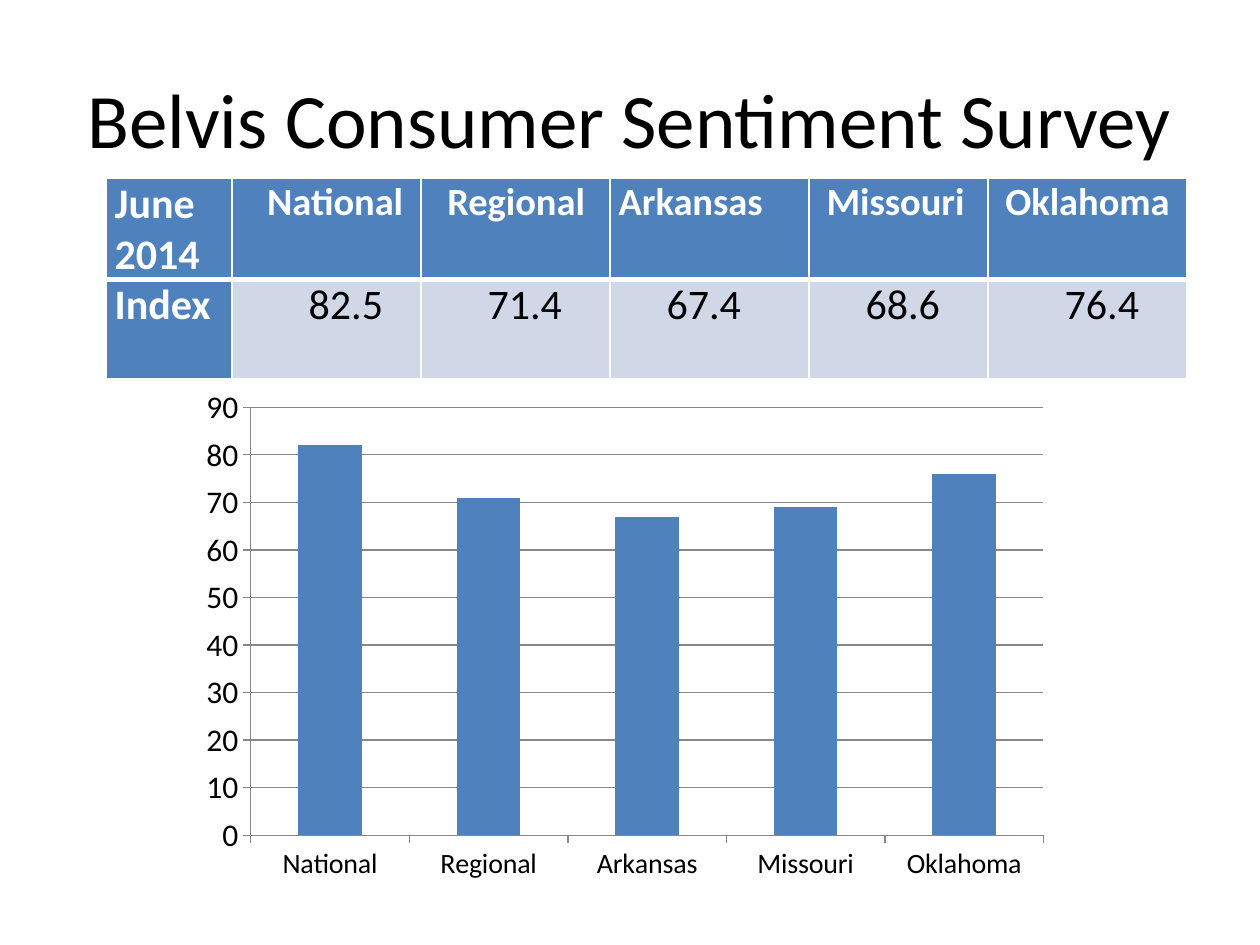
"""Build a slide with a consumer sentiment table and a matching column chart."""
from lxml.etree import SubElement
from pptx import Presentation
from pptx.chart.data import CategoryChartData
from pptx.dml.color import RGBColor
from pptx.enum.chart import XL_CHART_TYPE, XL_TICK_MARK
from pptx.enum.text import MSO_ANCHOR, PP_ALIGN
from pptx.oxml.ns import qn
from pptx.util import Inches, Pt

TITLE = "Belvis Consumer Sentiment Survey"
PERIOD, MEASURE = "June 2014", "Index"
REGIONS = ["National", "Regional", "Arkansas", "Missouri", "Oklahoma"]
SCORES = [82.5, 71.4, 67.4, 68.6, 76.4]
REGION_INDENTS = [0.21, 0.14, 0, 0.07, 0.07]
SCORE_INDENTS = [0.54, 0.46, 0.38, 0.38, 0.54]

THEME = {
    "font": "Calibri",
    "text": RGBColor(0, 0, 0),
    "light": RGBColor(255, 255, 255),
    "accent": RGBColor(0x4F, 0x81, 0xBD),
    "band": RGBColor(0xD0, 0xD8, 0xE8),
    "grid": RGBColor(0x87, 0x87, 0x87),
    "title": 44, "region": 22, "cell": 24, "category": 16, "value": 18,
}
SLIDE_SIZE = (10, 7.5)
TITLE_AREA = (0.05, 0.04, 0.9, 0.17)
TABLE_AREA = (0.084, 0.189, 0.858, 0.212)
CHART_AREA = (0.15, 0.4, 0.692, 0.544)
COLUMN_WIDTHS = [1, 1.5, 1.5, 1.58, 1.42, 1.58]
ROW_HEIGHTS = [0.8, 0.79]
CELL_MARGIN = 0.07
THIN, THICK = 1, 3


def place(area):
    """Turn shares of the slide into a left, top, width, height list."""
    return [Inches(share * SLIDE_SIZE[index % 2]) for index, share in enumerate(area)]


def set_attributes(target, values):
    """Set every named attribute on the target."""
    for name, value in values.items():
        setattr(target, name, value)


def style_font(font, size, color, bold=False):
    """Apply the theme font with a size, colour and weight."""
    set_attributes(font, {"name": THEME["font"], "size": Pt(size), "bold": bold})
    font.color.rgb = color


def add_borders(cell, widths):
    """Draw the left, right, top and bottom borders of a cell."""
    properties = cell._tc.get_or_add_tcPr()
    for side, width in zip("LRTB", widths):
        line = SubElement(properties, qn(f"a:ln{side}"), w=str(Pt(width)))
        fill = SubElement(line, qn("a:solidFill"))
        SubElement(fill, qn("a:srgbClr"), val=str(THEME["light"]))


def add_title(slide):
    """Add the centred heading."""
    frame = slide.shapes.add_textbox(*place(TITLE_AREA)).text_frame
    set_attributes(frame, {"word_wrap": True, "vertical_anchor": MSO_ANCHOR.MIDDLE,
                           "margin_left": 0, "margin_right": 0})
    paragraph = frame.paragraphs[0]
    set_attributes(paragraph, {"text": TITLE, "alignment": PP_ALIGN.CENTER})
    style_font(paragraph.runs[0].font, THEME["title"], THEME["text"])


def add_score_table(slide):
    """Add the table of regions and scores."""
    rows = [[PERIOD, *REGIONS], [MEASURE, *map(str, SCORES)]]
    indents = [[0, *REGION_INDENTS], [0, *SCORE_INDENTS]]
    table = slide.shapes.add_table(len(rows), len(rows[0]), *place(TABLE_AREA)).table
    for column, width in zip(table.columns, COLUMN_WIDTHS):
        column.width = Inches(width)
    for row, height in zip(table.rows, ROW_HEIGHTS):
        row.height = Inches(height)
    for row_index, texts in enumerate(rows):
        for column_index, text in enumerate(texts):
            cell = table.cell(row_index, column_index)
            heading = row_index == 0 or column_index == 0
            region = row_index == 0 and column_index > 0
            indent = indents[row_index][column_index]
            set_attributes(cell, {
                "text": text, "margin_left": Inches(CELL_MARGIN + indent),
                "margin_right": Inches(0 if indent else CELL_MARGIN),
                "margin_top": 0, "margin_bottom": 0,
            })
            vertical = (THIN, THICK) if row_index == 0 else (THICK, THIN)
            add_borders(cell, (THIN, THIN, *vertical))
            cell.fill.solid()
            cell.fill.fore_color.rgb = THEME["accent" if heading else "band"]
            style_font(cell.text_frame.paragraphs[0].runs[0].font,
                       THEME["region" if region else "cell"],
                       THEME["light" if heading else "text"], heading)


def add_score_chart(slide):
    """Add the column chart of the scores, rounded to whole numbers."""
    data = CategoryChartData()
    data.categories = REGIONS
    data.add_series("Series 1", [round(score) for score in SCORES])
    chart = slide.shapes.add_chart(
        XL_CHART_TYPE.COLUMN_CLUSTERED, *place(CHART_AREA), data).chart
    set_attributes(chart, {"has_legend": False, "has_title": False})
    plot = chart.plots[0]
    set_attributes(plot, {"gap_width": 150, "vary_by_categories": False})
    fill = plot.series[0].format.fill
    fill.solid()
    fill.fore_color.rgb = THEME["accent"]
    set_attributes(chart.value_axis, {"minimum_scale": 0, "maximum_scale": 90,
                                      "major_unit": 10, "has_major_gridlines": True})
    axes = {"category": chart.category_axis, "value": chart.value_axis}
    for name, axis in axes.items():
        set_attributes(axis, {"major_tick_mark": XL_TICK_MARK.OUTSIDE,
                              "minor_tick_mark": XL_TICK_MARK.NONE})
        style_font(axis.tick_labels.font, THEME[name], THEME["text"])
    for part in (*axes.values(), chart.value_axis.major_gridlines):
        part.format.line.color.rgb = THEME["grid"]
        part.format.line.width = Pt(0.75)


def main():
    """Create the presentation and save it."""
    presentation = Presentation()
    width, height = map(Inches, SLIDE_SIZE)
    set_attributes(presentation, {"slide_width": width, "slide_height": height})
    slide = presentation.slides.add_slide(presentation.slide_layouts[6])
    for add_part in (add_title, add_score_table, add_score_chart):
        add_part(slide)
    presentation.save("out.pptx")


if __name__ == "__main__":
    main()
